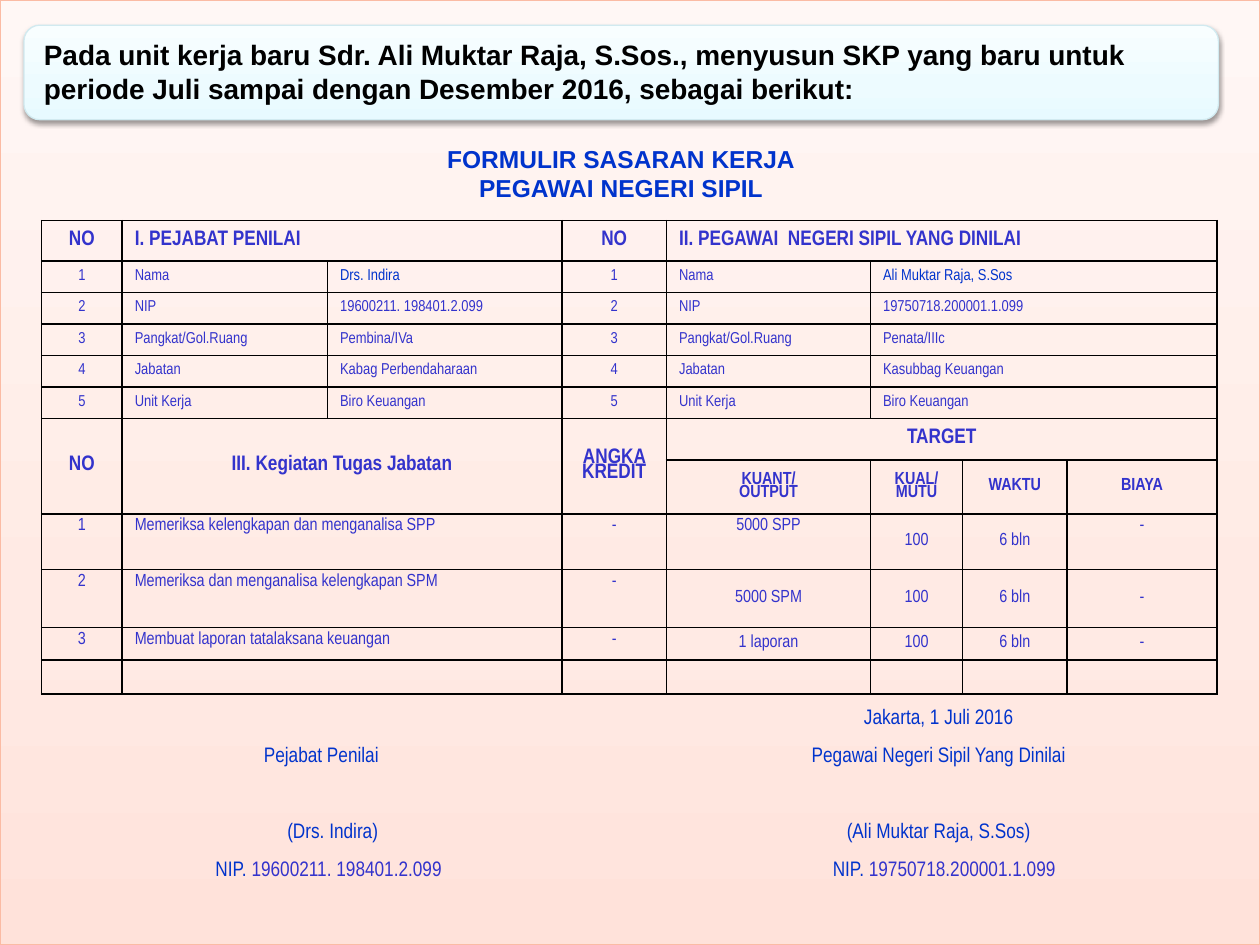
from copy import deepcopy
from lxml.etree import SubElement
from pptx import Presentation
from pptx.dml.color import RGBColor
from pptx.enum.shapes import MSO_SHAPE
from pptx.enum.text import MSO_ANCHOR, PP_ALIGN
from pptx.oxml.ns import qn
from pptx.util import Inches, Pt

COLORS = {
    "black": "000000", "blue": "0033CC", "violet": "3333CC",
    "peach_edge": "FBBBA4", "ice_edge": "D1EAF0",
}
PEACH = ["FFE2DA", "FFEAE4", "FFF7F5"]
ICE = ["E7FAFF", "EDFBFF", "F8FEFF"]
PLAIN = "{2D5ABB26-0587-4C30-8999-92F81FD0307C}"
NARROW = "Arial Narrow"
LEFT, MID = PP_ALIGN.LEFT, PP_ALIGN.CENTER

COLS = [0.64, 1.63, 1.86, 0.83, 1.62, 0.73, 0.83, 1.19]
ROWS = [0.32] + [0.25] * 5 + [0.33, 0.43, 0.44, 0.46, 0.26, 0.27]
PEOPLE = [
    ("Nama", "Drs. Indira", "Ali Muktar Raja, S.Sos"),
    ("NIP", "19600211. 198401.2.099", "19750718.200001.1.099"),
    ("Pangkat/Gol.Ruang", "Pembina/IVa", "Penata/IIIc"),
    ("Jabatan", "Kabag Perbendaharaan", "Kasubbag Keuangan"),
    ("Unit Kerja", "Biro Keuangan", "Biro Keuangan"),
]
TASKS = [
    ("Memeriksa kelengkapan dan menganalisa SPP", "5000 SPP"),
    ("Memeriksa dan menganalisa kelengkapan SPM", "5000 SPM"),
    ("Membuat laporan tatalaksana keuangan", "1 laporan"),
]


def style(run, size, color, bold=False, face=NARROW):
    font = run.font
    font.size, font.bold, font.name = Pt(size), bold, face
    font.color.rgb = RGBColor.from_string(COLORS[color])


def add_panel(slide, kind, box, stops, edge):
    """Add a shape whose gradient runs from the bottom up."""
    panel = slide.shapes.add_shape(kind, *map(Inches, box))
    panel.shadow.inherit = False
    panel.fill.gradient()
    panel.fill.gradient_angle = 90
    ramp = panel._element.spPr.find(".//" + qn("a:gsLst"))
    ramp.append(deepcopy(ramp[0]))
    for stop, place, tone in zip(panel.fill.gradient_stops, (0, 0.35, 1), stops):
        stop.position = place
        stop.color.rgb = RGBColor.from_string(tone)
    panel.line.color.rgb = RGBColor.from_string(COLORS[edge])
    panel.line.width = Pt(0.75)
    return panel


def add_shade(panel):
    """Cast a soft shadow straight down."""
    effects = panel._element.spPr.find(qn("a:effectLst"))
    shade = SubElement(effects, qn("a:outerShdw"), blurRad=str(Pt(3.1)),
                       dist=str(Pt(1.6)), dir="5400000", rotWithShape="0")
    tone = SubElement(shade, qn("a:srgbClr"), val=COLORS["black"])
    SubElement(tone, qn("a:alpha"), val="38000")


def add_text(slide, box, text, size, color, align):
    frame = slide.shapes.add_textbox(*map(Inches, box)).text_frame
    frame.word_wrap = True
    frame.vertical_anchor = MSO_ANCHOR.MIDDLE
    frame.text = text
    for para in frame.paragraphs:
        para.alignment = align
        style(para.runs[0], size, color, True, "Arial")


def add_grid(slide, left, top, cols, rows):
    """Add a table with no style, no fill and small empty cells."""
    grid = slide.shapes.add_table(
        len(rows), len(cols), Inches(left), Inches(top),
        Inches(sum(cols)), Inches(sum(rows))).table
    grid.first_row = grid.horz_banding = False
    grid._tbl.tblPr.find(qn("a:tableStyleId")).text = PLAIN
    for col, width in zip(grid.columns, cols):
        col.width = Inches(width)
    for row, height in zip(grid.rows, rows):
        row.height = Inches(height)
    for cell in grid.iter_cells():
        cell.fill.background()
        para = cell.text_frame.paragraphs[0]._p
        SubElement(para, qn("a:endParaRPr"), sz="900")
    return grid


def rule(cell):
    """Draw a thin black border on all four sides."""
    props = cell._tc.get_or_add_tcPr()
    for spot, side in enumerate(("lnL", "lnR", "lnT", "lnB")):
        line = props.makeelement(qn("a:" + side), {"w": str(Pt(1))})
        props.insert(spot, line)
        fill = SubElement(line, qn("a:solidFill"))
        SubElement(fill, qn("a:srgbClr"), val=COLORS["black"])


def put(cell, text, size, align=MID, bold=False, color="violet",
        anchor=MSO_ANCHOR.MIDDLE, space=0.8):
    cell.text = text
    cell.vertical_anchor = anchor
    for para in cell.text_frame.paragraphs:
        para.alignment = align
        para.line_spacing = space
        style(para.runs[0], size, color, bold)


def add_form(slide):
    grid = add_grid(slide, 0.33, 1.75, COLS, ROWS)
    for cell in grid.iter_cells():
        rule(cell)
    spans = [(0, 1, 0, 2), (0, 4, 0, 7), (6, 0, 7, 0), (6, 1, 7, 2),
             (6, 3, 7, 3), (6, 4, 6, 7)]
    spans += [(row, 5, row, 7) for row in range(1, 6)]
    spans += [(row, 1, row, 2) for row in range(8, 12)]
    for row, col, end_row, end_col in spans:
        grid.cell(row, col).merge(grid.cell(end_row, end_col))

    heads = [
        (0, 0, "NO", MID), (0, 1, "I. PEJABAT PENILAI", LEFT),
        (0, 3, "NO", MID), (0, 4, "II. PEGAWAI  NEGERI SIPIL YANG DINILAI", LEFT),
        (6, 0, "NO", MID), (6, 1, "III. Kegiatan Tugas Jabatan", MID),
        (6, 3, "ANGKA KREDIT", MID), (6, 4, "TARGET", MID),
    ]
    for row, col, text, align in heads:
        put(grid.cell(row, col), text, 12, align, True)
    for col, text in enumerate(["KUANT/\nOUTPUT", "KUAL/ MUTU", "WAKTU", "BIAYA"], 4):
        put(grid.cell(7, col), text, 10, bold=True)

    for num, (label, boss, staff) in enumerate(PEOPLE, 1):
        tone = "blue" if num == 1 else "violet"
        for col, name in ((0, boss), (3, staff)):
            put(grid.cell(num, col), str(num), 9)
            put(grid.cell(num, col + 1), label, 9, LEFT)
            put(grid.cell(num, col + 2), name, 9, LEFT, color=tone)

    for num, (task, amount) in enumerate(TASKS, 1):
        texts = {0: str(num), 1: task, 3: "-", 4: amount, 5: "100", 6: "6 bln", 7: "-"}
        for col, text in texts.items():
            high = col < 4 or (num == 1 and col in (4, 7))
            put(grid.cell(num + 7, col), text, 10, LEFT if col == 1 else MID,
                anchor=MSO_ANCHOR.TOP if high else MSO_ANCHOR.MIDDLE)


def add_signs(slide):
    grid = add_grid(slide, 0.59, 5.58, [3.92, 0.98, 3.92], [0.3] * 5)

    def sign(row, col, text, align=MID, inset=0.1):
        cell = grid.cell(row, col)
        cell.margin_left = Inches(inset)
        put(cell, text, 12, align, color="blue", anchor=MSO_ANCHOR.TOP, space=1)
        return cell.text_frame.paragraphs[0]

    sign(0, 2, "Jakarta, 1 Juli 2016")
    sign(1, 0, "Pejabat Penilai")
    sign(1, 2, "Pegawai Negeri Sipil Yang Dinilai")
    sign(3, 0, "(Drs. Indira)", LEFT, 1.69)
    sign(3, 2, "(Ali Muktar Raja, S.Sos)")
    for col, person in ((0, 1), (2, 2)):
        para = sign(4, col, "NIP. ", LEFT, 1.12)
        run = para.add_run()
        run.text = PEOPLE[1][person]
        style(run, 12, "violet")


def main():
    deck = Presentation()
    deck.slide_width, deck.slide_height = Inches(10), Inches(7.5)
    slide = deck.slides.add_slide(deck.slide_layouts[6])
    add_panel(slide, MSO_SHAPE.RECTANGLE, (0, 0, 10, 7.5), PEACH, "peach_edge")
    add_shade(add_panel(slide, MSO_SHAPE.ROUNDED_RECTANGLE,
                        (0.19, 0.2, 9.48, 0.75), ICE, "ice_edge"))
    add_text(slide, (0.25, 0.23, 9.58, 0.67),
             "Pada unit kerja baru Sdr. Ali Muktar Raja, S.Sos., menyusun SKP yang "
             "baru untuk periode Juli sampai dengan Desember 2016, sebagai berikut:",
             16, "black", LEFT)
    add_text(slide, (2.53, 1.09, 4.8, 0.57),
             "FORMULIR SASARAN KERJA\nPEGAWAI NEGERI SIPIL", 14, "blue", MID)
    add_form(slide)
    add_signs(slide)
    deck.save("out.pptx")


if __name__ == "__main__":
    main()
